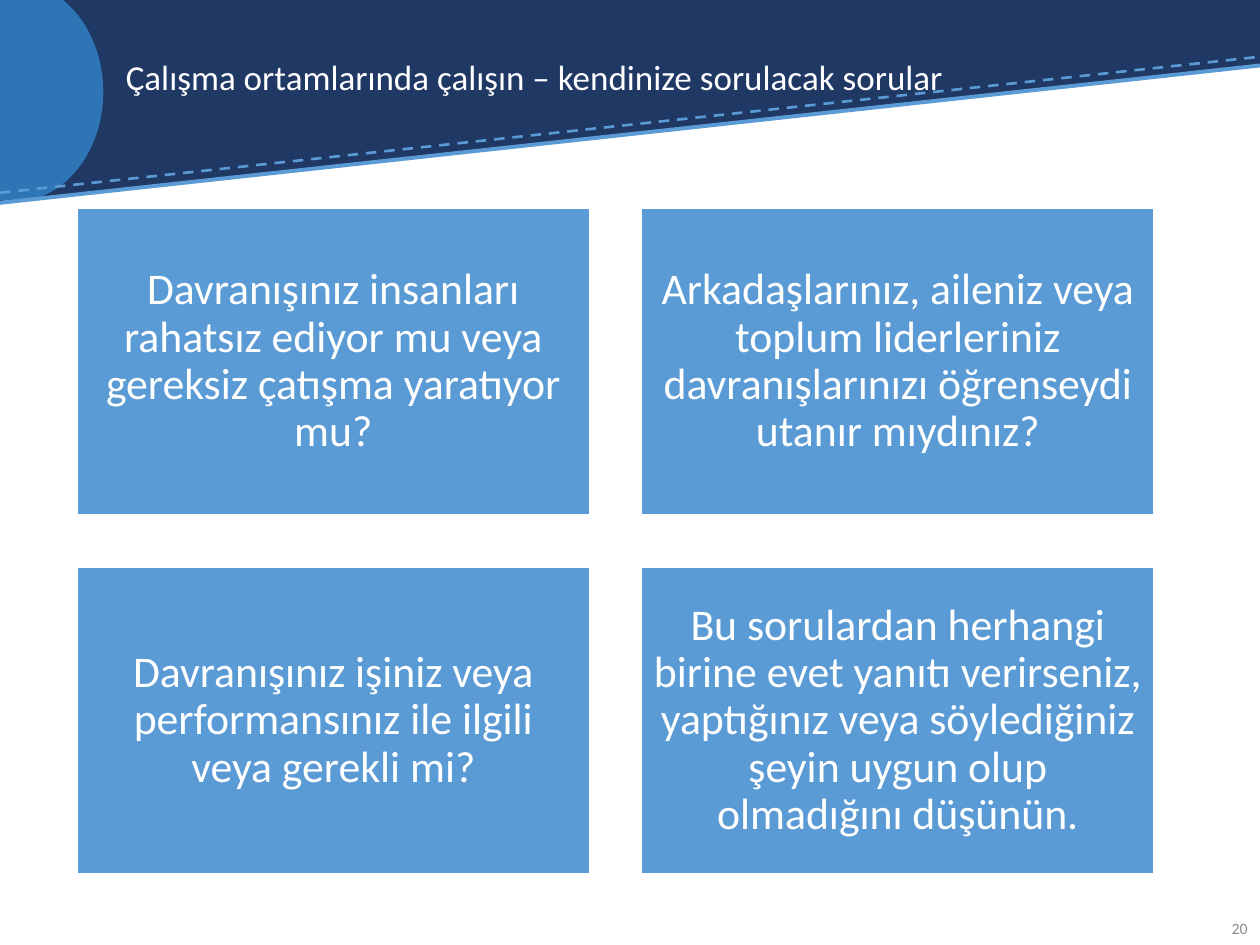
from lxml import etree
from pptx import Presentation
from pptx import util as u
from pptx.dml.color import RGBColor
from pptx.enum import dml, shapes, text
from pptx.oxml.ns import qn

NAVY = RGBColor(0x20, 0x38, 0x64)
BLUE = RGBColor(0x2E, 0x75, 0xB6)
SKY = RGBColor(0x5B, 0x9B, 0xD5)
WHITE = RGBColor(0xFF, 0xFF, 0xFF)
GREY = RGBColor(0x8C, 0x8C, 0x8C)

TITLE = "Çalışma ortamlarında çalışın – kendinize sorulacak sorular"
QUESTIONS = [
    "Davranışınız insanları rahatsız ediyor mu veya gereksiz çatışma yaratıyor mu?",
    "Arkadaşlarınız, aileniz veya toplum liderleriniz davranışlarınızı öğrenseydi utanır mıydınız?",
    "Davranışınız işiniz veya performansınız ile ilgili veya gerekli mi?",
    "Bu sorulardan herhangi birine evet yanıtı verirseniz, yaptığınız veya "
    "söylediğiniz şeyin uygun olup olmadığını düşünün.",
]


def write_text(sp, content, size, color=WHITE, align=text.PP_ALIGN.LEFT,
               spacing=0.9, inset=None):
    """Put one formatted, vertically centred paragraph into a shape."""
    tf = sp.text_frame
    tf.word_wrap = True
    tf.vertical_anchor = text.MSO_ANCHOR.MIDDLE
    if inset is not None:
        tf.margin_left = tf.margin_right = tf.margin_top = tf.margin_bottom = inset
    p = tf.paragraphs[0]
    p.alignment = align
    p.line_spacing = spacing
    r = p.add_run()
    r.text = content
    r.font.name = "Calibri"
    r.font.size = u.Pt(size)
    r.font.color.rgb = color


def add_filled(s, kind, x, y, w, h, fill, line=None):
    """Add a flat preset shape, with an outline only if a colour is given."""
    sp = s.shapes.add_shape(kind, u.Inches(x), u.Inches(y), u.Inches(w), u.Inches(h))
    sp.shadow.inherit = False
    sp.fill.solid()
    sp.fill.fore_color.rgb = fill
    if line is None:
        sp.line.fill.background()
    else:
        sp.line.color.rgb = line
        sp.line.width = u.Pt(1)
    return sp


def add_line(s, x1, y1, x2, y2, width, dash=None):
    """Add a straight sky-blue line without shadow."""
    c = s.shapes.add_connector(shapes.MSO_CONNECTOR.STRAIGHT, u.Inches(x1),
                               u.Inches(y1), u.Inches(x2), u.Inches(y2))
    c.line.color.rgb = SKY
    c.line.width = u.Pt(width)
    if dash is not None:
        c.line.dash_style = dash
    etree.SubElement(c._element.spPr, qn("a:effectLst"))


def add_text(s, x, y, w, h, content, **fmt):
    """Add a text box with one formatted paragraph."""
    sp = s.shapes.add_textbox(u.Inches(x), u.Inches(y), u.Inches(w), u.Inches(h))
    write_text(sp, content, **fmt)


def add_header(s, x, y, w, h):
    """Draw the slanted banner with its circle, edge lines and title."""
    kind = shapes.MSO_SHAPE
    bar = 0.52
    add_filled(s, kind.RECTANGLE, x, y, w, bar, NAVY)
    wedge = add_filled(s, kind.RIGHT_TRIANGLE, x, y + bar - 0.01, w, h - bar + 0.01, NAVY)
    wedge._element.spPr.find(qn("a:xfrm")).set("flipV", "1")
    add_filled(s, kind.OVAL, x - 0.59, y - 0.14, 1.41, h + 0.14, BLUE)
    add_line(s, x, y + h - 0.07, x + w, y + bar - 0.07, 1.5, dml.MSO_LINE.DASH)
    add_line(s, x, y + h + 0.01, x + w, y + bar, 2.25)
    add_text(s, x + 0.9, y + 0.2, 8.05, 0.86, TITLE, size=20)


def add_questions(s, x, y, w, h, cols=2, gap=0.41):
    """Lay the question cards out in an evenly spaced grid."""
    rows = len(QUESTIONS) // cols
    card_w = (w - gap * (cols - 1)) / cols
    card_h = (h - gap * (rows - 1)) / rows
    for i, question in enumerate(QUESTIONS):
        row, col = divmod(i, cols)
        card = add_filled(s, shapes.MSO_SHAPE.RECTANGLE, x + col * (card_w + gap),
                          y + row * (card_h + gap), card_w, card_h, SKY, WHITE)
        write_text(card, question, 25, align=text.PP_ALIGN.CENTER, inset=u.Inches(0.1))


def main():
    """Build and save the slide."""
    prs = Presentation()
    prs.slide_width, prs.slide_height = u.Inches(10), u.Inches(7.5)
    s = prs.slides.add_slide(prs.slide_layouts[6])
    add_header(s, 0, 0, 10, 1.6)
    add_text(s, 9.47, 7.17, 0.53, 0.4, "20", size=9, color=GREY,
             align=text.PP_ALIGN.RIGHT, spacing=1.0)
    add_questions(s, 0.61, 1.65, 8.55, 5.29)
    prs.save("out.pptx")


if __name__ == "__main__":
    main()
